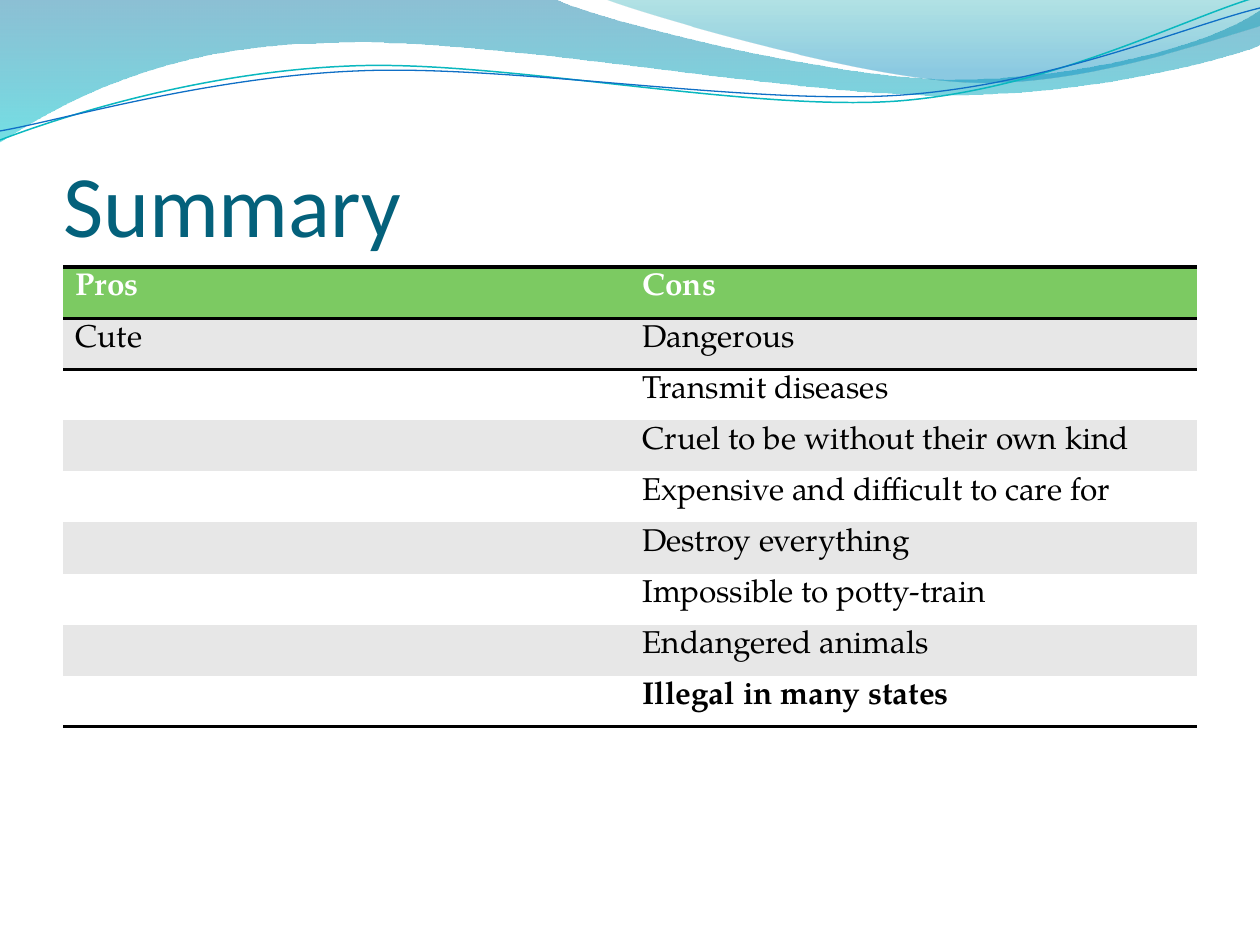
from lxml import etree
from pptx import Presentation
from pptx import util as u
from pptx.dml.color import RGBColor
from pptx.enum import text
from pptx.oxml.ns import qn

TITLE = "Summary"
ROWS = [
    ("Pros", "Cons"),
    ("Cute", "Dangerous"),
    ("", "Transmit diseases"),
    ("", "Cruel to be without their own kind"),
    ("", "Expensive and difficult to care for"),
    ("", "Destroy everything"),
    ("", "Impossible to potty-train"),
    ("", "Endangered animals"),
    ("", "Illegal in many states"),
]

WHITE, BLACK = RGBColor(255, 255, 255), RGBColor(0, 0, 0)
GREEN, GREY = RGBColor(0x7C, 0xCA, 0x62), RGBColor(0xE7, 0xE7, 0xE7)
TEAL = RGBColor(0x04, 0x61, 0x7B)
DEEP, AQUA = RGBColor(0x00, 0x74, 0xA1), RGBColor(0x00, 0xC6, 0xCF)
SEA, SKY = RGBColor(0x00, 0xA1, 0xA9), RGBColor(0x00, 0x8B, 0xBF)
CYAN, BLUE = RGBColor(0x0A, 0xB8, 0xBF), RGBColor(0x0F, 0x6F, 0xC6)

# Each outline starts with a point; then one point is a line, three are a curve.
# Gradient stops are (position, colour, opacity), both numbers in percent.
BANDS = [
    ([[(0, 0)], [(554, -1)],
      [(600, 21), (837, 79), (955, 79)], [(1075, 79), (1207, 47), (1260, 11)],
      [(1261, 45)],
      [(1239, 55), (1096, 96), (940, 95)], [(784, 95), (481, 35), (324, 43)],
      [(163, 45), (58, 105), (-1, 142)]],
     [(0, DEEP, 45), (100, AQUA, 55)]),
    ([[(604, -1)],
      [(641, 14), (859, 78), (969, 82)], [(1079, 87), (1211, 40), (1260, 26)],
      [(1260, 0)]],
     [(0, SEA, 30), (80, SKY, 45)]),
]
WAVES = [
    ([[(0, 140)],
      [(60, 117), (199, 72), (349, 66)], [(498, 59), (747, 112), (898, 101)],
      [(1050, 89), (1182, 19), (1257, -3)]], CYAN, 0.85),
    ([[(0, 131)],
      [(59, 121), (207, 77), (357, 71)], [(508, 64), (752, 106), (903, 95)],
      [(1053, 84), (1186, 26), (1260, 8)]], BLUE, 0.75),
]

PX = u.Inches(1) // 126
LEFT, WIDTH = 63, 1134
TITLE_TOP, TITLE_HEIGHT = 97, 158
TABLE_TOP, TABLE_HEIGHT = 267, 460
PLAIN_TABLE_STYLE = "{2D5ABB26-0587-4C30-8999-92F81FD0307C}"


def format_font(font, **values):
    for name, value in values.items():
        if name == "color":
            font.color.rgb = value
        else:
            setattr(font, name, value)


def add_curved_outline(page, segments, close):
    """Draw through all points, then turn each run of three into a Bezier curve."""
    points = [point for segment in segments for point in segment]
    builder = page.shapes.build_freeform(*points[0], scale=PX)
    builder.add_line_segments(points[1:], close=close)
    shape = builder.convert_to_shape()
    shape.shadow.inherit = False
    lines = iter(list(shape._element.iter(qn("a:lnTo"))))
    for segment in segments[1:]:
        steps = [next(lines) for _ in segment]
        if len(steps) == 3:
            curve = etree.Element(qn("a:cubicBezTo"))
            steps[0].addprevious(curve)
            for step in steps:
                curve.append(step[0])
                step.getparent().remove(step)
    return shape


def add_band(page, segments, stops):
    band = add_curved_outline(page, segments, close=True)
    band.line.fill.background()
    band.fill.gradient()
    band.fill.gradient_angle = 270
    for stop, (position, colour, opacity) in zip(band.fill.gradient_stops, stops):
        stop.position = position / 100
        stop.color.rgb = colour
    colours = band._element.spPr.find(qn("a:gradFill")).iter(qn("a:srgbClr"))
    for element, (_, _, opacity) in zip(colours, stops):
        etree.SubElement(element, qn("a:alpha"), val=str(opacity * 1000))


def add_wave(page, segments, colour, weight):
    wave = add_curved_outline(page, segments, close=False)
    wave.fill.background()
    wave.line.color.rgb = colour
    wave.line.width = u.Pt(weight)


def add_border(cell, side):
    """Put a 2 pt black border on a side, 'T' or 'B'; add B before T."""
    line = etree.Element(qn(f"a:ln{side}"), w=str(u.Pt(2)))
    fill = etree.SubElement(line, qn("a:solidFill"))
    etree.SubElement(fill, qn("a:srgbClr"), val=str(BLACK))
    cell._tc.get_or_add_tcPr().insert(0, line)


def add_title(page):
    title = page.shapes.title
    page.shapes._spTree.append(title._element)
    title.left, title.top = LEFT * PX, TITLE_TOP * PX
    title.width, title.height = WIDTH * PX, TITLE_HEIGHT * PX
    frame = title.text_frame
    frame.text = TITLE
    frame.vertical_anchor = text.MSO_ANCHOR.BOTTOM
    frame.auto_size = text.MSO_AUTO_SIZE.NONE
    frame.margin_left = frame.margin_right = frame.margin_bottom = 0
    para = frame.paragraphs[0]
    para.alignment = text.PP_ALIGN.LEFT
    format_font(para.runs[0].font, name="Calibri", size=u.Pt(50), color=TEAL)


def add_summary_table(page):
    table = page.shapes.add_table(len(ROWS), len(ROWS[0]), LEFT * PX, TABLE_TOP * PX,
                                  WIDTH * PX, TABLE_HEIGHT * PX).table
    table.horz_banding = False
    table._tbl.tblPr.find(qn("a:tableStyleId")).text = PLAIN_TABLE_STYLE
    last = len(ROWS) - 1
    for r, row in enumerate(ROWS):
        for c, words in enumerate(row):
            cell = table.cell(r, c)
            cell.text = words
            cell.fill.solid()
            cell.fill.fore_color.rgb = GREEN if r == 0 else GREY if r % 2 else WHITE
            format_font(cell.text_frame.paragraphs[0].font, name="TeX Gyre Pagella",
                        size=u.Pt(18), bold=r in (0, last),
                        color=WHITE if r == 0 else BLACK)
            if r in (0, last):
                add_border(cell, "B")
            if r == 0:
                add_border(cell, "T")
            elif r == 1:
                add_border(cell, "T")


def main():
    deck = Presentation()
    deck.slide_width, deck.slide_height = u.Inches(10), u.Inches(7.5)
    page = deck.slides.add_slide(deck.slide_layouts.get_by_name("Title Only"))
    for band in BANDS:
        add_band(page, *band)
    for wave in WAVES:
        add_wave(page, *wave)
    add_title(page)
    add_summary_table(page)
    deck.save("out.pptx")


if __name__ == "__main__":
    main()
